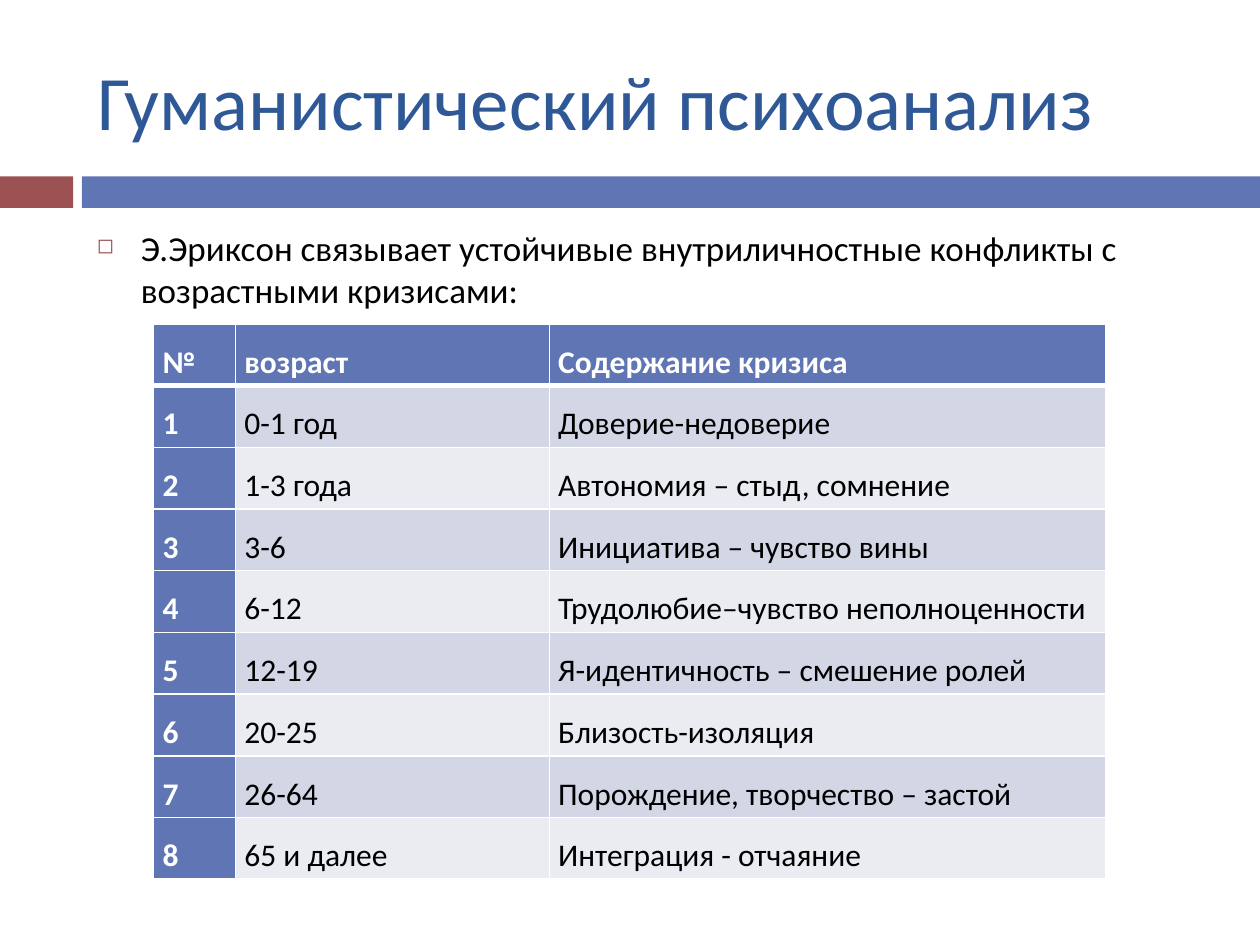
"""Build a slide with a table of age crises."""
from typing import NamedTuple

from lxml.etree import SubElement
from pptx import Presentation
from pptx.dml.color import RGBColor
from pptx.enum.shapes import MSO_SHAPE
from pptx.enum.text import MSO_ANCHOR, PP_ALIGN
from pptx.oxml.ns import qn
from pptx.util import Inches, Pt

HUES = {
    "title": "2F5897", "blue": "6076B4", "red": "9C5252", "text": "000000",
    "white": "FFFFFF", "dark": "D2D6E5", "light": "EAECF2",
}
FONT = "Calibri"
LEFT, WIDTH = 0.67, 8.92


class Bar(NamedTuple):
    left: float
    width: float
    hue: str


class Crisis(NamedTuple):
    num: str
    age: str
    theme: str


BARS = [Bar(0, 0.58, "red"), Bar(0.65, 9.35, "blue")]
COLS = [0.65, 2.49, 4.42]
ROW = 0.49
ROWS = [
    Crisis("№", "возраст", "Содержание кризиса"),
    Crisis("1", "0-1 год", "Доверие-недоверие"),
    Crisis("2", "1-3 года", "Автономия – стыд, сомнение"),
    Crisis("3", "3-6", "Инициатива – чувство вины"),
    Crisis("4", "6-12", "Трудолюбие–чувство неполноценности"),
    Crisis("5", "12-19", "Я-идентичность – смешение ролей"),
    Crisis("6", "20-25", "Близость-изоляция"),
    Crisis("7", "26-64", "Порождение, творчество – застой"),
    Crisis("8", "65 и далее", "Интеграция - отчаяние"),
]


def color(name: str) -> RGBColor:
    return RGBColor.from_string(HUES[name])


def style(para, size: float, hue: str, bold: bool = False) -> None:
    for run in para.runs:
        run.font.name = FONT
        run.font.size = Pt(size)
        run.font.bold = bold
        run.font.color.rgb = color(hue)


def draw_bar(slide, bar: Bar) -> None:
    shape = slide.shapes.add_shape(
        MSO_SHAPE.RECTANGLE, Inches(bar.left), Inches(1.4), Inches(bar.width), Inches(0.25))
    shape.shadow.inherit = False
    shape.fill.solid()
    shape.fill.fore_color.rgb = color(bar.hue)
    shape.line.fill.background()


def draw_title(slide, text: str) -> None:
    title = slide.shapes.title
    title.left, title.top = Inches(LEFT), Inches(0.25)
    title.width, title.height = Inches(WIDTH), Inches(1.08)
    frame = title.text_frame
    frame.text = text
    frame.vertical_anchor = MSO_ANCHOR.MIDDLE
    frame.paragraphs[0].alignment = PP_ALIGN.LEFT
    style(frame.paragraphs[0], 44, "title")


def draw_body(slide, text: str) -> None:
    box = slide.shapes.add_textbox(Inches(LEFT), Inches(1.75), Inches(WIDTH), Inches(4.92))
    frame = box.text_frame
    frame.word_wrap = True
    frame.text = text
    para = frame.paragraphs[0]
    para.space_before = Pt(7)
    style(para, 20, "text")
    props = para._p.get_or_add_pPr()
    props.set("marL", str(Inches(0.35)))
    props.set("indent", str(-Inches(0.35)))
    SubElement(SubElement(props, qn("a:buClr")), qn("a:srgbClr"), val=HUES["red"])
    SubElement(props, qn("a:buSzPct"), val="60000")
    SubElement(props, qn("a:buChar"), char="◻")


def set_edge(cell, tag: str, width: float) -> None:
    line = SubElement(cell._tc.get_or_add_tcPr(), qn(tag), w=str(Pt(width)))
    SubElement(SubElement(line, qn("a:solidFill")), qn("a:srgbClr"), val=HUES["white"])


def fill_cell(cell, text: str, row: int, col: int) -> None:
    head = row == 0 or col == 0
    edges = {"a:lnL": 1, "a:lnR": 1, "a:lnT": 3 if row == 1 else 1, "a:lnB": 1 if row else 3}
    for tag, width in edges.items():
        set_edge(cell, tag, width)
    cell.fill.solid()
    cell.fill.fore_color.rgb = color("blue" if head else "dark" if row % 2 else "light")
    cell.margin_left = cell.margin_right = Inches(0.07)
    cell.margin_top = cell.margin_bottom = 0
    cell.text_frame.text = text
    para = cell.text_frame.paragraphs[0]
    para.alignment = PP_ALIGN.JUSTIFY
    para.line_spacing = 1.5
    style(para, 18, "white" if head else "text", head)


def draw_table(slide, rows: list[Crisis]) -> None:
    table = slide.shapes.add_table(
        len(rows), len(COLS), Inches(1.22), Inches(2.57),
        Inches(sum(COLS)), Inches(ROW * len(rows))).table
    table.first_col = True
    for col, width in zip(table.columns, COLS):
        col.width = Inches(width)
    for r, crisis in enumerate(rows):
        table.rows[r].height = Inches(ROW)
        for c, text in enumerate(crisis):
            fill_cell(table.cell(r, c), text, r, c)


def main() -> None:
    deck = Presentation()
    deck.slide_width, deck.slide_height = Inches(10), Inches(7.5)
    slide = deck.slides.add_slide(deck.slide_layouts[5])
    for bar in BARS:
        draw_bar(slide, bar)
    draw_title(slide, "Гуманистический психоанализ")
    draw_body(slide, "Э.Эриксон связывает устойчивые внутриличностные конфликты "
                     "с возрастными кризисами:")
    draw_table(slide, ROWS)
    deck.save("out.pptx")


if __name__ == "__main__":
    main()
